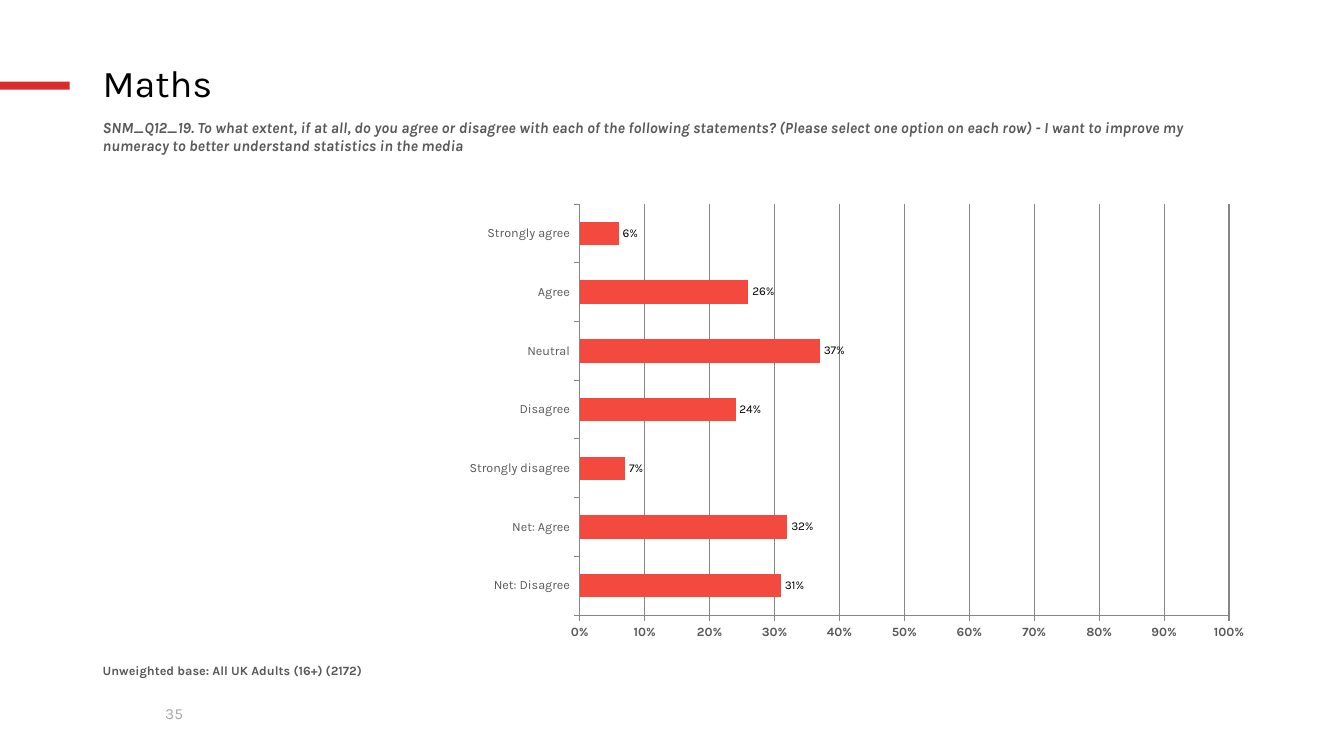
from dataclasses import dataclass

from lxml import etree
from pptx import Presentation
from pptx.chart.data import CategoryChartData
from pptx.dml.color import RGBColor
from pptx.enum.chart import (XL_CHART_TYPE, XL_LABEL_POSITION,
                             XL_TICK_LABEL_POSITION, XL_TICK_MARK)
from pptx.enum.shapes import MSO_SHAPE
from pptx.enum.text import MSO_ANCHOR
from pptx.oxml.ns import qn
from pptx.util import Inches, Pt

RECTANGLE = MSO_SHAPE.RECTANGLE
BAR_CLUSTERED = XL_CHART_TYPE.BAR_CLUSTERED
OUTSIDE_END = XL_LABEL_POSITION.OUTSIDE_END
LABELS_LOW = XL_TICK_LABEL_POSITION.LOW
TICK_OUTSIDE, TICK_NONE = XL_TICK_MARK.OUTSIDE, XL_TICK_MARK.NONE
TOP, MIDDLE = MSO_ANCHOR.TOP, MSO_ANCHOR.MIDDLE

LEFT, WIDTH = 0.92, 11.5
RESPONSES = [
    ("Net: Disagree", 0.31),
    ("Net: Agree", 0.32),
    ("Strongly disagree", 0.07),
    ("Disagree", 0.24),
    ("Neutral", 0.37),
    ("Agree", 0.26),
    ("Strongly agree", 0.06),
]
QUESTION = (
    "SNM_Q12_19. To what extent, if at all, do you agree or disagree with each "
    "of the following statements? (Please select one option on each row) - "
    "I want to improve my numeracy to better understand statistics in the media"
)


@dataclass(frozen=True)
class Theme:
    font: str = "Karla"
    black: str = "000000"
    grey: str = "595959"
    pale: str = "A6A6A6"
    line: str = "868686"
    accent: str = "DA2C2D"
    bar: str = "F3493E"
    title_size: float = 27
    body_size: float = 11
    axis_size: float = 9
    label_size: float = 8.5


class SlideBuilder:
    def __init__(self, page, theme):
        self.page = page
        self.theme = theme

    def style(self, font, size, color, bold=False, italic=False):
        font.name = self.theme.font
        font.size = Pt(size)
        font.bold = bold
        font.italic = italic
        font.color.rgb = RGBColor.from_string(color)

    def rectangle(self, left, top, width, height, color):
        shape = self.page.shapes.add_shape(
            RECTANGLE, Inches(left), Inches(top), Inches(width), Inches(height))
        shape.shadow.inherit = False
        shape.fill.solid()
        shape.fill.fore_color.rgb = RGBColor.from_string(color)
        shape.line.fill.background()

    def text(self, left, top, width, height, words, size, color,
             bold=False, italic=False, anchor=TOP, spacing=None):
        box = self.page.shapes.add_textbox(
            Inches(left), Inches(top), Inches(width), Inches(height))
        frame = box.text_frame
        frame.word_wrap = True
        frame.vertical_anchor = anchor
        frame.text = words
        para = frame.paragraphs[0]
        para.line_spacing = spacing
        self.style(para.runs[0].font, size, color, bold, italic)

    def bar_chart(self, left, top, width, height, responses, plot_area):
        data = CategoryChartData(number_format="0%")
        data.categories = [name for name, _ in responses]
        data.add_series("Series 1", [share for _, share in responses])
        chart = self.page.shapes.add_chart(
            BAR_CLUSTERED, Inches(left), Inches(top),
            Inches(width), Inches(height), data).chart
        chart.has_title = False
        chart.has_legend = False
        self.style(chart.font, self.theme.axis_size, self.theme.black)

        plot = chart.plots[0]
        plot.vary_by_categories = False
        plot.gap_width = 150
        plot.overlap = -10
        fill = plot.series[0].format.fill
        fill.solid()
        fill.fore_color.rgb = RGBColor.from_string(self.theme.bar)
        plot.has_data_labels = True
        labels = plot.data_labels
        labels.show_value = True
        labels.position = OUTSIDE_END
        labels.number_format = "0%"
        labels.number_format_is_linked = False
        self.style(labels.font, self.theme.label_size, self.theme.black)

        self.axis(chart.category_axis, bold=False)
        shares = chart.value_axis
        self.axis(shares, bold=True)
        shares.minimum_scale, shares.maximum_scale = 0, 1
        shares.major_unit = 0.1
        shares.tick_labels.number_format = "0%"
        shares.tick_labels.number_format_is_linked = False
        shares.has_major_gridlines = True
        self.axis_line(shares.major_gridlines.format.line)
        self.place_plot(chart, plot_area)

    def axis(self, axis, bold):
        axis.has_major_gridlines = False
        axis.major_tick_mark = TICK_OUTSIDE
        axis.minor_tick_mark = TICK_NONE
        axis.tick_label_position = LABELS_LOW
        self.axis_line(axis.format.line)
        self.style(axis.tick_labels.font, self.theme.axis_size,
                   self.theme.grey, bold)

    def axis_line(self, line):
        line.width = Pt(0.75)
        line.color.rgb = RGBColor.from_string(self.theme.line)

    def place_plot(self, chart, plot_area):
        """Fix the inner plot area as fractions (x, y, w, h) of the chart."""
        area = chart.element.find(".//" + qn("c:plotArea"))
        for old in area.findall(qn("c:layout")):
            area.remove(old)
        layout = etree.Element(qn("c:layout"))
        area.insert(0, layout)
        manual = etree.SubElement(layout, qn("c:manualLayout"))
        settings = [("layoutTarget", "inner"), ("xMode", "edge"), ("yMode", "edge")]
        settings += zip("xywh", plot_area)
        for tag, value in settings:
            etree.SubElement(manual, qn("c:" + tag)).set("val", str(value))


def main():
    deck = Presentation()
    deck.slide_width, deck.slide_height = Inches(13.33), Inches(7.5)
    theme = Theme()
    builder = SlideBuilder(deck.slides.add_slide(deck.slide_layouts[6]), theme)

    builder.rectangle(0, 0.81, 0.69, 0.08, theme.accent)
    builder.text(1.54, 6.94, 0.68, 0.29, "35", theme.body_size, theme.pale)
    builder.text(LEFT, 0.59, WIDTH, 0.51, "Maths", theme.title_size,
                 theme.black, anchor=MIDDLE, spacing=0.9)
    builder.text(LEFT, 1.12, WIDTH, 0.66, QUESTION, theme.body_size,
                 theme.grey, bold=True, italic=True)
    builder.text(LEFT, 6.53, WIDTH, 0.43,
                 "Unweighted base: All UK Adults (16+) (2172)",
                 theme.axis_size, theme.grey, bold=True)
    builder.bar_chart(LEFT, 1.89, WIDTH, 4.53, RESPONSES,
                      plot_area=(0.42, 0.03, 0.56, 0.9))
    deck.save("out.pptx")


if __name__ == "__main__":
    main()
